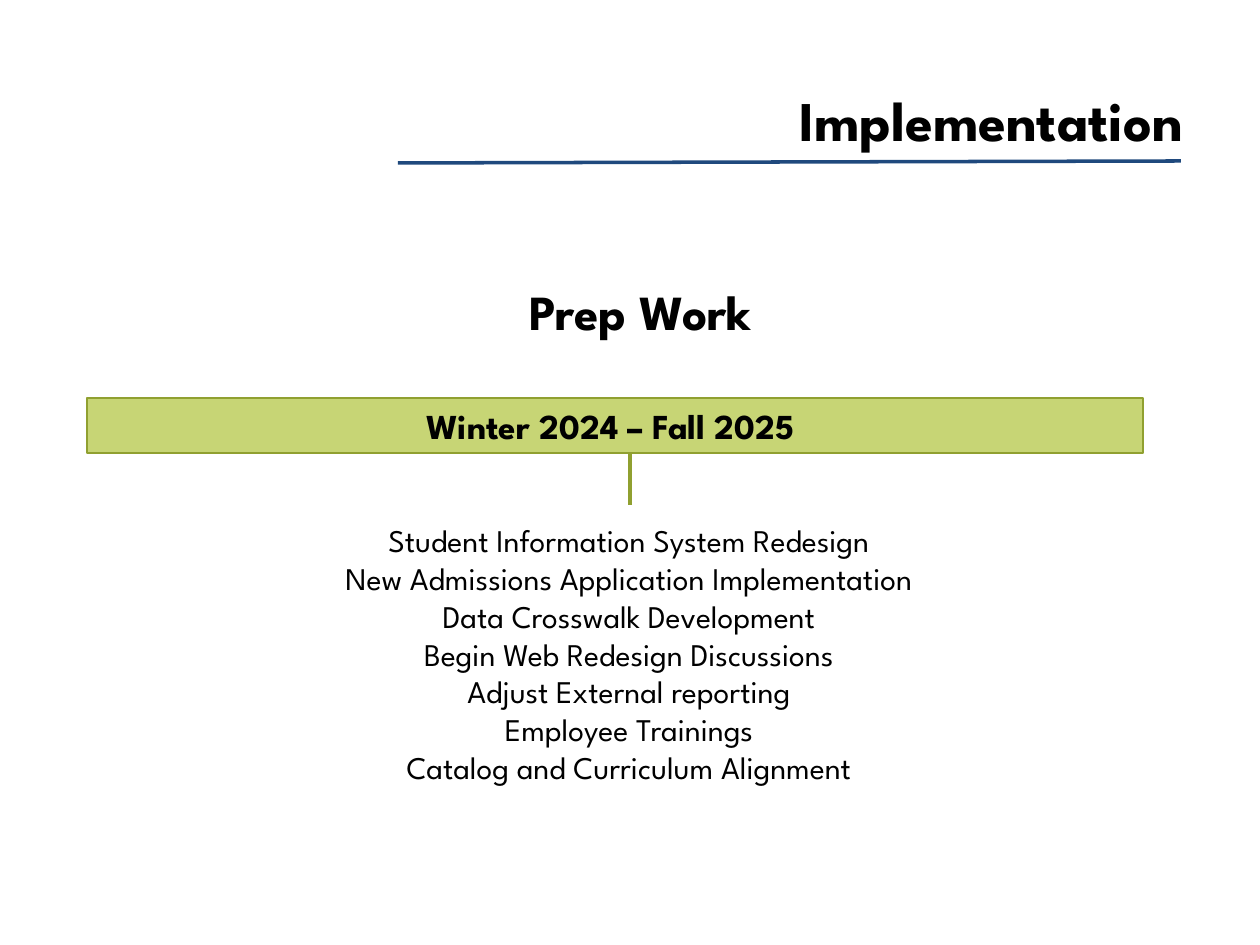
from lxml import etree
from pptx import Presentation
from pptx.dml.color import RGBColor
from pptx.enum.shapes import MSO_CONNECTOR, MSO_SHAPE
from pptx.enum.text import MSO_ANCHOR, PP_ALIGN
from pptx.oxml.ns import qn
from pptx.util import Pt

PX = 914400 / 126
STRAIGHT = MSO_CONNECTOR.STRAIGHT
RECTANGLE = MSO_SHAPE.RECTANGLE
CENTER, RIGHT = PP_ALIGN.CENTER, PP_ALIGN.RIGHT
MIDDLE = MSO_ANCHOR.MIDDLE
FONT = "League Spartan"
COLORS = {"text": "000000", "rule": "1F497D", "bar": "C7D575", "bar_edge": "90A030"}


def px(*lengths):
    """Turn lengths in px into EMU."""
    return [round(length * PX) for length in lengths]


def write(shape, lines, size, align, bold):
    """Fill a shape with one paragraph per line."""
    frame = shape.text_frame
    frame.word_wrap = True
    for i, line in enumerate(lines):
        paragraph = frame.paragraphs[0] if i == 0 else frame.add_paragraph()
        paragraph.alignment = align
        run = paragraph.add_run()
        run.text = line
        run.font.name = FONT
        run.font.size = Pt(size)
        run.font.bold = bold
        run.font.color.rgb = RGBColor.from_string(COLORS["text"])


prs = Presentation()
prs.slide_width, prs.slide_height = px(1260, 945)
slide = prs.slides.add_slide(prs.slide_layouts[6])
shapes = slide.shapes

title = shapes.add_textbox(*px(352, 79, 844, 81))
write(title, ["Implementation"], 32, RIGHT, True)

period_bar = shapes.add_shape(RECTANGLE, *px(87, 398, 1056, 55))
period_bar.shadow.inherit = False
period_bar.fill.solid()
period_bar.fill.fore_color.rgb = RGBColor.from_string(COLORS["bar"])
period_bar.line.color.rgb = RGBColor.from_string(COLORS["bar_edge"])
period_bar.line.width = Pt(0.75)
period_bar.text_frame.vertical_anchor = MIDDLE
write(period_bar, ["Winter 2024 – Fall 2025 "], 20, CENTER, True)

tasks = [
    "Student Information System Redesign",
    "New Admissions Application Implementation",
    "Data Crosswalk Development",
    "Begin Web Redesign Discussions",
    "Adjust External reporting",
    "Employee Trainings",
    "Catalog and Curriculum Alignment",
]
task_list = shapes.add_textbox(*px(244, 515, 770, 280))
write(task_list, tasks, 18, CENTER, False)

# The title rule, then the stem from the period bar to the tasks
for ends, color in [((398, 163, 1181, 161), "rule"), ((630, 453, 630, 505), "bar_edge")]:
    connector = shapes.add_connector(STRAIGHT, *px(*ends))
    connector.line.color.rgb = RGBColor.from_string(COLORS[color])
    connector.line.width = Pt(2)
    etree.SubElement(connector._element.spPr, qn("a:effectLst"))

phase = shapes.add_textbox(*px(330, 275, 621, 72))
write(phase, ["Prep Work"], 28, CENTER, True)

prs.save("out.pptx")
